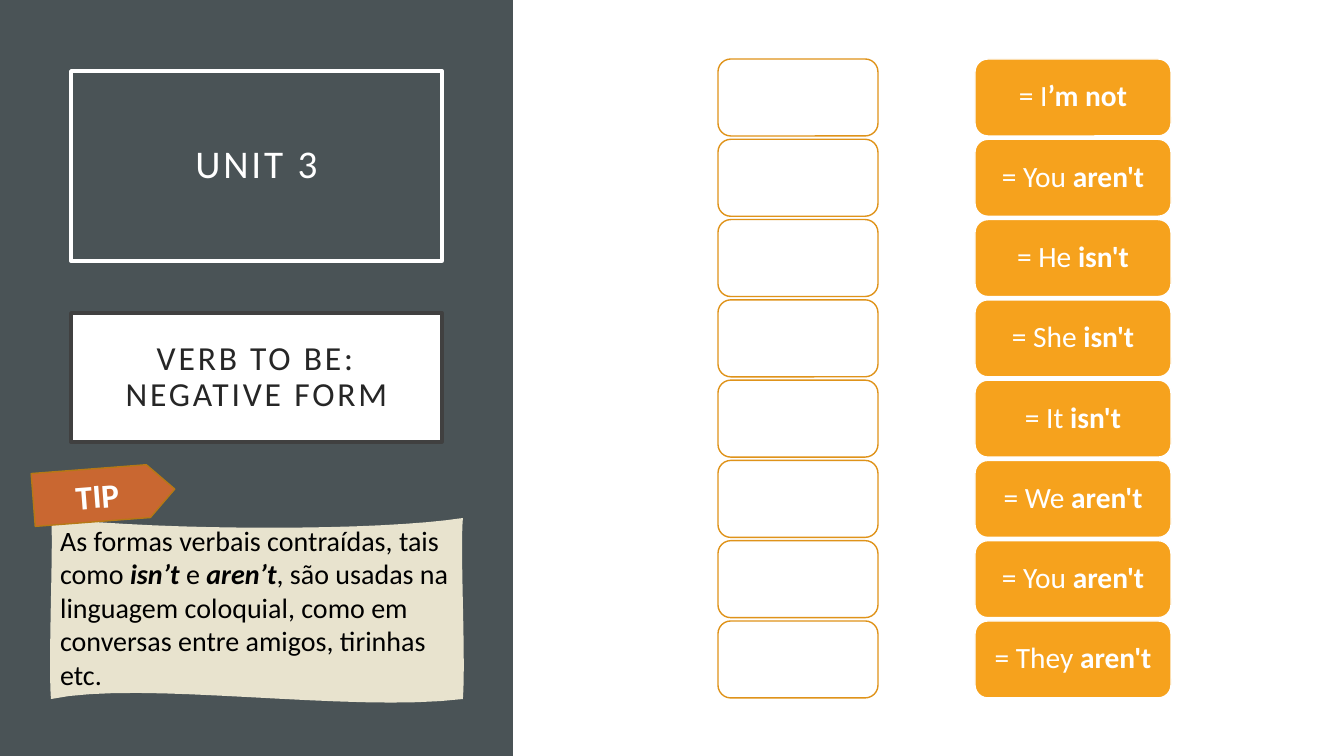
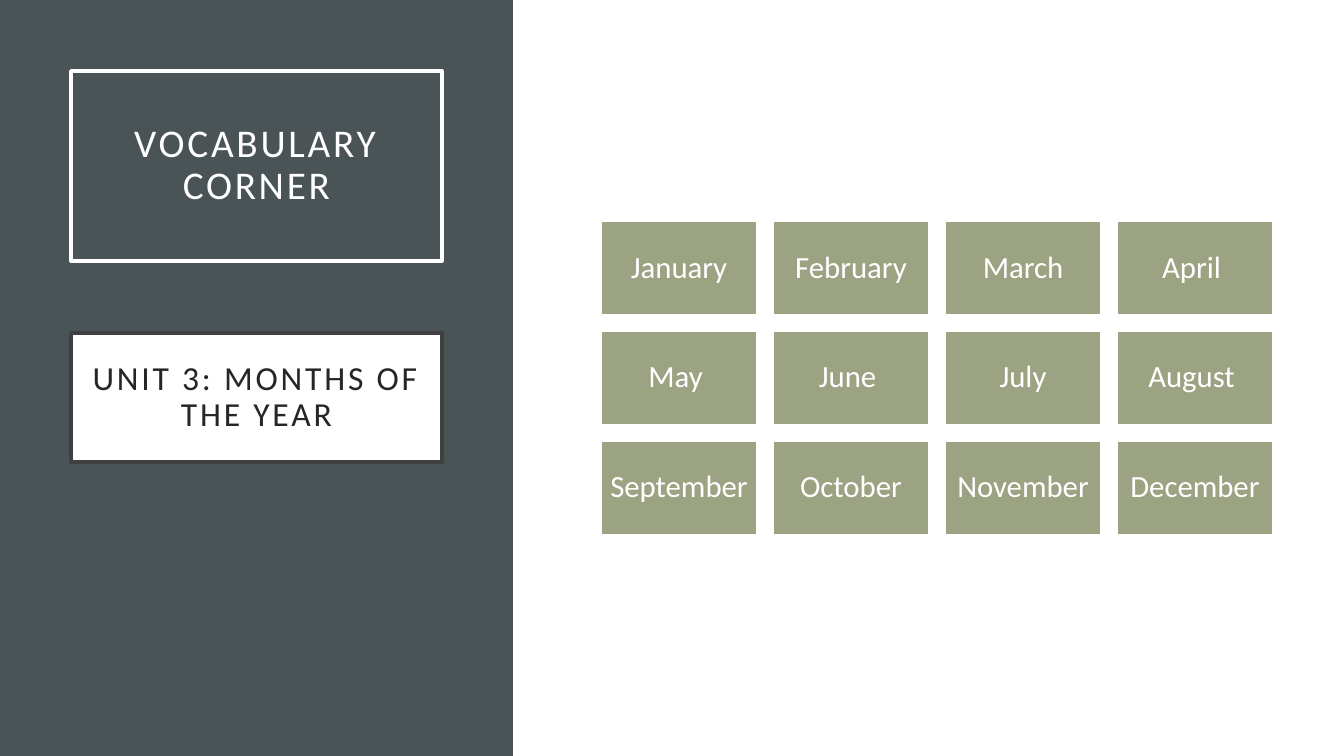
from pptx import Presentation
from pptx.dml.color import RGBColor
from pptx.enum.shapes import MSO_SHAPE
from pptx.enum.text import MSO_ANCHOR, MSO_AUTO_SIZE, PP_ALIGN
from pptx.util import Pt

RECTANGLE = MSO_SHAPE.RECTANGLE
ROUNDED = MSO_SHAPE.ROUNDED_RECTANGLE
ARROW_TAG = MSO_SHAPE.PENTAGON
LEFT, CENTER = PP_ALIGN.LEFT, PP_ALIGN.CENTER
TOP, MIDDLE = MSO_ANCHOR.TOP, MSO_ANCHOR.MIDDLE

PX = 9071  # EMU in one px, at 100.8 px to the inch
FONT = "Calibri"
WHITE, BLACK, INK, FRAME = "FFFFFF", "000000", "262626", "404040"
SLATE, PAPER, RUST, RUST_EDGE = "4A5356", "E8E3CE", "C96731", "B67815"
ORANGE, ORANGE_EDGE, SAGE = "F6A21D", "DF931A", "9CA383"


def style_shape(shape, fill=None, line=None, width=1):
    """Set fill and outline from hex colours; None means no paint."""
    shape.shadow.inherit = False
    if fill:
        shape.fill.solid()
        shape.fill.fore_color.rgb = RGBColor.from_string(fill)
    else:
        shape.fill.background()
    if line:
        shape.line.color.rgb = RGBColor.from_string(line)
        shape.line.width = Pt(width)
    else:
        shape.line.fill.background()


def write_text(shape, *runs, size, color=WHITE, align=CENTER, anchor=MIDDLE,
               margins=(10, 5), line_spacing=0.9, tracking=0):
    """Write one paragraph; a run is (text, style), where style may hold b and i."""
    frame = shape.text_frame
    frame.word_wrap = True
    frame.auto_size = MSO_AUTO_SIZE.NONE
    frame.vertical_anchor = anchor
    frame.margin_left = frame.margin_right = margins[0] * PX
    frame.margin_top = frame.margin_bottom = margins[1] * PX
    paragraph = frame.paragraphs[0]
    paragraph.alignment = align
    paragraph.line_spacing = line_spacing
    for text, style in runs:
        run = paragraph.add_run()
        run.text = text
        run.font.name = FONT
        run.font.size = Pt(size)
        run.font.bold = "b" in style
        run.font.italic = "i" in style
        run.font.color.rgb = RGBColor.from_string(color)
        if tracking:
            run._r.get_or_add_rPr().set("spc", str(tracking * 100))


presentation = Presentation()
presentation.slide_width = 1344 * PX
presentation.slide_height = 756 * PX
title_only = presentation.slide_layouts[5]

# Side panel, title and topic box
HEADINGS = [
    ("UNIT 3", "VERB TO BE: NEGATIVE FORM", 313),
    ("VOCABULARY CORNER", "UNIT 3: MONTHS OF THE YEAR", 333),
]
for title_text, topic_text, topic_top in HEADINGS:
    slide = presentation.slides.add_slide(title_only)
    title = slide.shapes.title
    panel = slide.shapes.add_shape(RECTANGLE, 0, 0, 513 * PX, 756 * PX)
    style_shape(panel, fill=SLATE)
    title.element.addprevious(panel.element)

    title.left, title.top = 71 * PX, 71 * PX
    title.width, title.height = 371 * PX, 190 * PX
    style_shape(title, line=WHITE, width=2.5)
    write_text(title, (title_text, ""), size=28, margins=(20, 20), tracking=2)

    topic = slide.shapes.add_shape(RECTANGLE, 71 * PX, topic_top * PX, 371 * PX, 129 * PX)
    style_shape(topic, fill=WHITE, line=FRAME, width=2.5)
    write_text(topic, (topic_text, ""), size=24, color=INK, margins=(20, 20), tracking=2)

verb_slide, months_slide = presentation.slides

# Tip note: each curved side is two control points and an end point
note_start = (51, 518)
NOTE_SIDES = [
    ((168, 531), (380, 531), (463, 518)),
    ((460, 553), (466, 653), (463, 699)),
    ((350, 713), (142, 680), (51, 699)),
    ((48, 657), (54, 537), note_start),
]
STEPS = 16
outline = []
side_start = note_start
for control_1, control_2, side_end in NOTE_SIDES:
    for step in range(1, STEPS + 1):
        t = step / STEPS
        outline.append([
            PX * ((1 - t) ** 3 * a + 3 * (1 - t) ** 2 * t * b + 3 * (1 - t) * t ** 2 * c + t ** 3 * d)
            for a, b, c, d in zip(side_start, control_1, control_2, side_end)
        ])
    side_start = side_end
builder = verb_slide.shapes.build_freeform(note_start[0] * PX, note_start[1] * PX)
builder.add_line_segments(outline)
note = builder.convert_to_shape()
style_shape(note, fill=PAPER)
write_text(
    note,
    ("As formas verbais contraídas, tais como ", ""),
    ("isn’t ", "bi"),
    ("e ", ""),
    ("aren’t", "bi"),
    (", são usadas na linguagem coloquial, como em conversas entre amigos, tirinhas etc.", ""),
    size=20, color=BLACK, align=LEFT, anchor=TOP, line_spacing=1,
)

tip = verb_slide.shapes.add_shape(ARROW_TAG, 33 * PX, 468 * PX, 142 * PX, 53 * PX)
tip.rotation = -4.4
style_shape(tip, fill=RUST, line=RUST_EDGE)
write_text(tip, ("TIP", "b"), size=24, line_spacing=1)

# Blank boxes beside the contracted forms
CONTRACTIONS = [
    ("= I", "’m not"), ("= You ", "aren't"), ("= He ", "isn't"), ("= She ", "isn't"),
    ("= It ", "isn't"), ("= We ", "aren't"), ("= You ", "aren't"), ("= They ", "aren't"),
]
FIRST_TOP, LAST_TOP, ROW_HEIGHT = 59, 621, 77
row_pitch = (LAST_TOP - FIRST_TOP) * PX // (len(CONTRACTIONS) - 1)
for row, (subject, negative) in enumerate(CONTRACTIONS):
    row_top = FIRST_TOP * PX + row * row_pitch
    blank = verb_slide.shapes.add_shape(ROUNDED, 718 * PX, row_top, 160 * PX, ROW_HEIGHT * PX)
    style_shape(blank, fill=WHITE, line=ORANGE_EDGE)
    answer = verb_slide.shapes.add_shape(ROUNDED, 975 * PX, row_top, 196 * PX, ROW_HEIGHT * PX)
    style_shape(answer, fill=ORANGE, line=WHITE)
    write_text(answer, (subject, ""), (negative, "b"), size=21, margins=(9, 4))

# Month grid
MONTHS = [
    "January", "February", "March", "April ",
    "May ", "June ", "July", "August ",
    "September", "October", "November", "December",
]
COLUMNS = 4
for index, month in enumerate(MONTHS):
    row, column = divmod(index, COLUMNS)
    tile = months_slide.shapes.add_shape(
        RECTANGLE, (601 + 172 * column) * PX, (221 + 110 * row) * PX, 156 * PX, 94 * PX)
    style_shape(tile, fill=SAGE, line=WHITE)
    write_text(tile, (month, ""), size=22, margins=(9, 9))

presentation.save("out.pptx")
